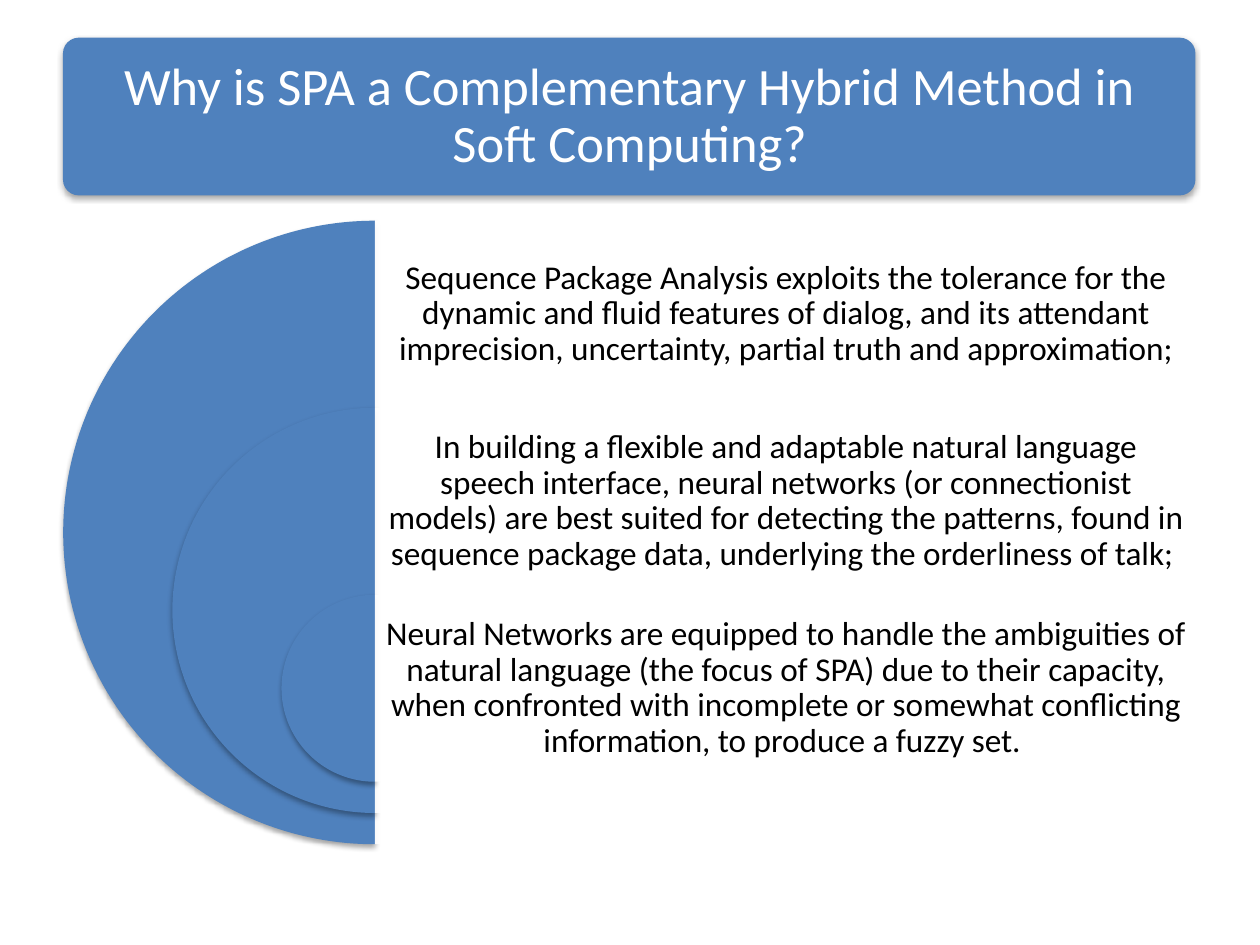
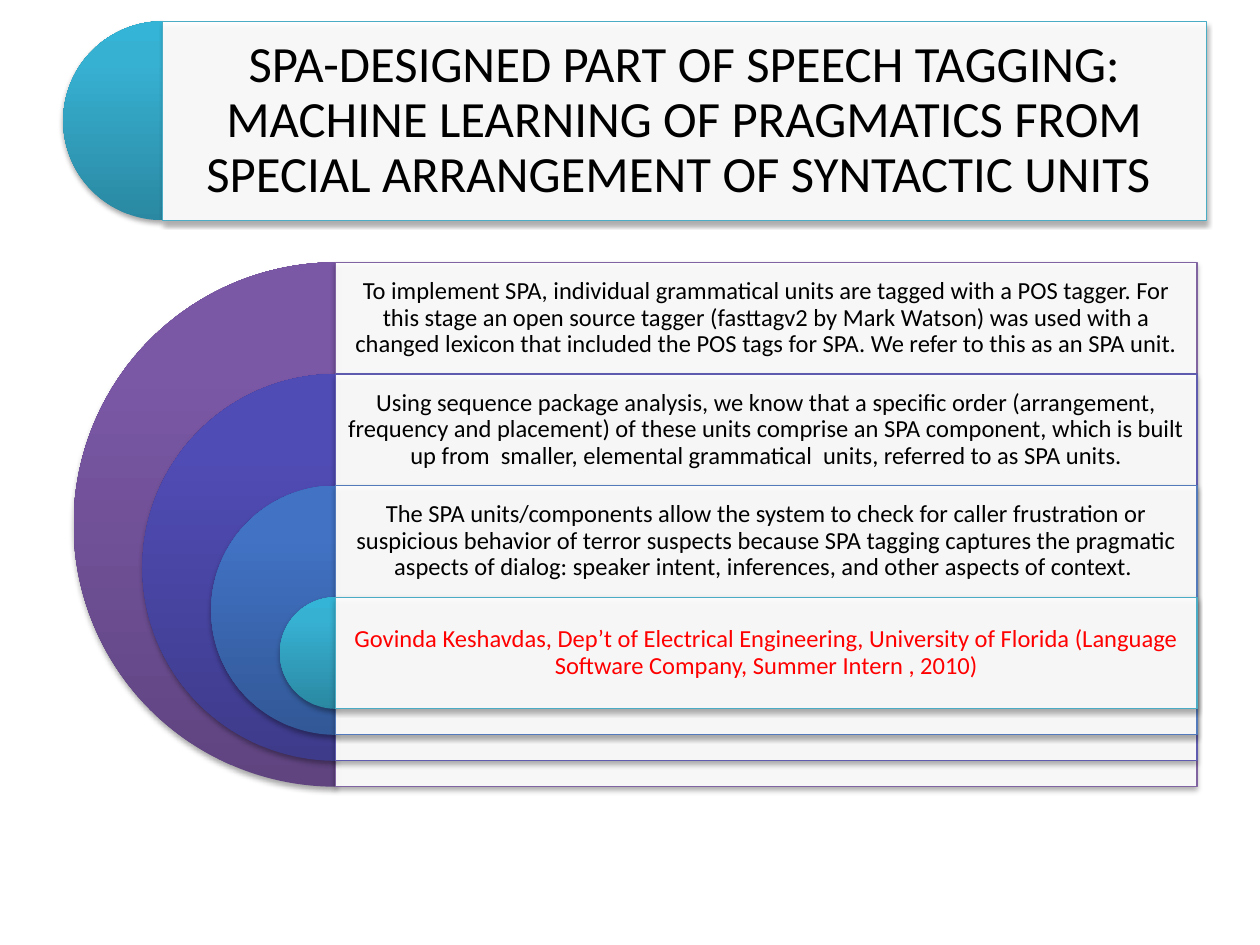
import copy
import dataclasses

import lxml.etree
import pptx
import pptx.dml.color
import pptx.enum.shapes
import pptx.enum.text
import pptx.oxml.ns
import pptx.util

Cm, Pt = pptx.util.Cm, pptx.util.Pt
qn = pptx.oxml.ns.qn
KIND = pptx.enum.shapes.MSO_SHAPE
BLUE, WHITE, BLACK, RED = "4F81BD", "FFFFFF", "000000", "FF0000"
FRAME = {
    "word_wrap": True,
    "auto_size": pptx.enum.text.MSO_AUTO_SIZE.NONE,
    "vertical_anchor": pptx.enum.text.MSO_ANCHOR.MIDDLE,
}
PARA = {"alignment": pptx.enum.text.PP_ALIGN.CENTER, "line_spacing": 0.9}
SHADE = {"blurRad": Pt(3.1), "dist": Pt(1.8), "dir": 90 * 60000,
         "algn": "ctr", "rotWithShape": 0}


@dataclasses.dataclass
class Box:
    """Place and size in centimetres."""
    left: float
    top: float
    width: float
    height: float

    def spot(self) -> list:
        return [Cm(v) for v in dataclasses.astuple(self)]


@dataclasses.dataclass
class Tone:
    """Ring colours from bottom to top, and the panel's line colour."""
    fills: tuple
    line: str = ""


@dataclasses.dataclass
class Band:
    text: str
    tone: Tone
    ink: str = BLACK


@dataclasses.dataclass
class Stack:
    """Nested half rings; mid is the straight edge, where the panels start."""
    mid: float
    top: float
    size: float
    right: float
    step: float
    points: float
    inset: float
    bands: list


PLAIN = Tone((BLUE,))
PURPLE = Tone(("5F4480", "7B58A6", "7C57A8"), "8064A2")
INDIGO = Tone(("3E3B8B", "504CB5", "4F4BB8"), "5F5BAE")
AZURE = Tone(("325897", "4172C4", "3F72C7"), "537ABA")
TEAL = Tone(("2A88A2", "37B1D2", "34B4D6"), "4BACC6")

WHY = "Why is SPA a Complementary Hybrid Method in Soft Computing?"
REASONS = Stack(7.56, 4.45, 12.57, 24.13, 3.77, 19, 0.2, [
    Band("Sequence Package Analysis exploits the tolerance for the dynamic and "
         "fluid features of dialog, and its attendant imprecision, uncertainty, "
         "partial truth and approximation;", PLAIN),
    Band("In building a flexible and adaptable natural language speech "
         "interface, neural networks (or connectionist models) are best suited "
         "for detecting the patterns, found in sequence package data, "
         "underlying the orderliness of talk; ", PLAIN),
    Band("Neural Networks are equipped to handle the ambiguities of natural "
         "language (the focus of SPA) due to their capacity, when confronted "
         "with incomplete or somewhat conflicting information, to produce a "
         "fuzzy set. ", PLAIN),
])
HEAD = Stack(3.28, 0.43, 4.01, 24.33, 4.01, 29, 0.3, [
    Band("SPA-DESIGNED PART OF SPEECH TAGGING:\nMACHINE LEARNING OF PRAGMATICS "
         "FROM SPECIAL ARRANGEMENT OF SYNTACTIC UNITS ", TEAL),
])
STEPS = Stack(6.77, 5.29, 10.57, 24.13, 2.25, 14, 0.15, [
    Band("To implement SPA, individual grammatical units are tagged with a POS "
         "tagger. For this stage an open source tagger (fasttagv2 by Mark "
         "Watson) was used with a changed lexicon that included the POS tags "
         "for SPA. We refer to this as an SPA unit.", PURPLE),
    Band("Using sequence package analysis, we know that a specific order "
         "(arrangement, frequency and placement) of these units comprise an "
         "SPA component, which is built up from  smaller, elemental "
         "grammatical  units, referred to as SPA units.", INDIGO),
    Band("The SPA units/components allow the system to check for caller "
         "frustration or suspicious behavior of terror suspects because SPA "
         "tagging captures the pragmatic aspects of dialog: speaker intent, "
         "inferences, and other aspects of context. ", AZURE),
    Band("Govinda Keshavdas, Dep’t of Electrical Engineering, University of "
         "Florida (Language Software Company, Summer Intern , 2010)",
         TEAL, RED),
])


def hue(code: str) -> pptx.dml.color.RGBColor:
    return pptx.dml.color.RGBColor.from_string(code)


def apply(target, values: dict) -> None:
    for name, value in values.items():
        setattr(target, name, value)


def add(node, tag: str, **values):
    texts = {name: str(value) for name, value in values.items()}
    return lxml.etree.SubElement(node, qn(tag), texts)


def paint(shape, fills: tuple) -> None:
    """Fill with one colour, or with three blended from bottom to top."""
    if len(fills) == 1:
        shape.fill.solid()
        shape.fill.fore_color.rgb = hue(fills[0])
        return
    shape.fill.gradient()
    shape.fill.gradient_angle = 90
    stops = shape._element.spPr.find(".//" + qn("a:gsLst"))
    stops.append(copy.deepcopy(stops[0]))
    for stop, place, code in zip(shape.fill.gradient_stops, (0, 0.8, 1), fills):
        stop.position = place
        stop.color.rgb = hue(code)


def draw(slide, kind, box: Box, fills: tuple, line: str = "",
         shade: bool = True, adjust: tuple = ()):
    shape = slide.shapes.add_shape(kind, *box.spot())
    for index, value in enumerate(adjust):
        shape.adjustments[index] = value
    paint(shape, fills)
    if line:
        shape.line.color.rgb = hue(line)
        shape.line.width = Pt(0.75)
    else:
        shape.line.fill.background()
    shape.shadow.inherit = False
    if shade:
        effects = shape._element.spPr.find(qn("a:effectLst"))
        outer = add(effects, "a:outerShdw", **SHADE)
        add(add(outer, "a:srgbClr", val=BLACK), "a:alpha", val=35000)
    return shape


def write(shape, text: str, points: float, inset: float, ink: str) -> None:
    frame = shape.text_frame
    apply(frame, FRAME)
    apply(frame, {f"margin_{side}": Cm(inset)
                  for side in ("left", "top", "right", "bottom")})
    para = frame.paragraphs[0]
    para.text = text
    apply(para, PARA)
    for run in para.runs:
        apply(run.font, {"name": "Calibri", "size": Pt(points)})
        run.font.color.rgb = hue(ink)
    for gap in para._p.findall(qn("a:br")):
        add(gap, "a:rPr", sz=round(points * 100))


def raise_title(slide, box: Box):
    """Move the title placeholder to its place, in front of the shapes."""
    title = slide.shapes.title
    apply(title, dict(zip(("left", "top", "width", "height"), box.spot())))
    slide.shapes._spTree.append(title._element)
    return title


def build(slide, stack: Stack, head: bool = False) -> None:
    shrink = (stack.size - stack.step) / max(len(stack.bands) - 1, 1)
    width = stack.right - stack.mid
    for index, band in enumerate(stack.bands):
        size = stack.size - index * shrink
        top = stack.top + index * stack.step
        draw(slide, KIND.PIE, Box(stack.mid - size / 2, top, size, size),
             band.tone.fills, adjust=(54, 162))
        panel = draw(slide, KIND.RECTANGLE, Box(stack.mid, top, width, size),
                     (WHITE,), band.tone.line, shade=bool(band.tone.line))
        tint = panel._element.spPr.find(qn("a:solidFill"))[0]
        add(tint, "a:alpha", val=90000)
        box = Box(stack.mid, top, width, stack.step)
        if head:
            label = raise_title(slide, box)
        else:
            label = slide.shapes.add_textbox(*box.spot())
        write(label, band.text, stack.points, stack.inset, band.ink)


def main() -> None:
    deck = pptx.Presentation()
    apply(deck, {"slide_width": Cm(25.4), "slide_height": Cm(19.05)})
    layout = deck.slide_layouts[5]

    reasons = deck.slides.add_slide(layout)
    draw(reasons, KIND.ROUNDED_RECTANGLE, Box(1.27, 0.76, 22.83, 3.18),
         (BLUE,), adjust=(0.1,))
    title = raise_title(reasons, Box(1.37, 0.86, 22.65, 3))
    write(title, WHY, 30, 0.3, WHITE)
    build(reasons, REASONS)

    tagging = deck.slides.add_slide(layout)
    build(tagging, HEAD, head=True)
    build(tagging, STEPS)
    deck.save("out.pptx")


if __name__ == "__main__":
    main()
